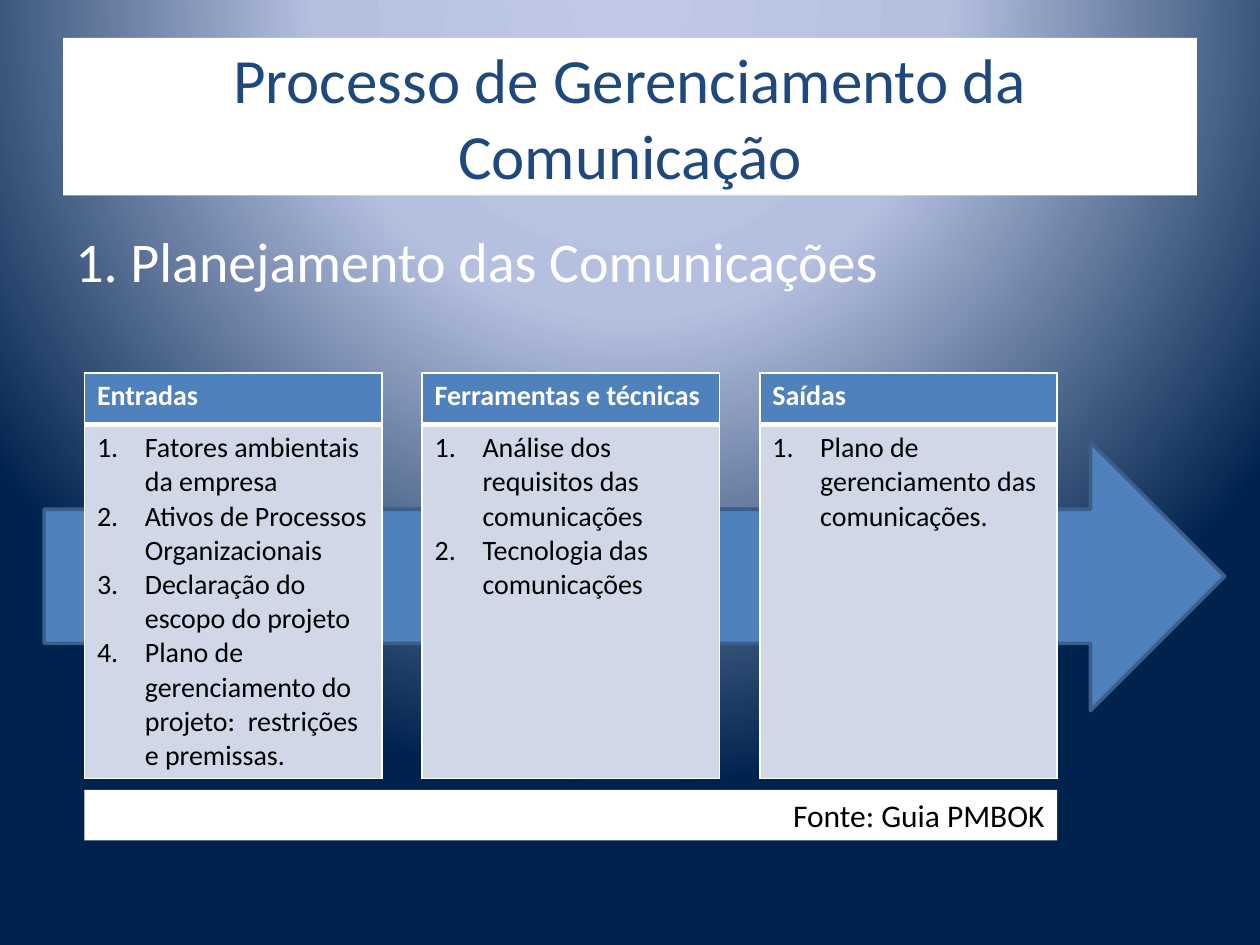
from lxml import etree
from pptx import Presentation, util as u
from pptx.dml.color import RGBColor
from pptx.enum import shapes, text
from pptx.oxml import parse_xml
from pptx.oxml.ns import nsdecls, qn

FONT = "Calibri"
WHITE, BLACK, NAVY = "FFFFFF", "000000", "1F497D"
BLUE, PALE, EDGE = "4F81BD", "D0D8E8", "3A5F8C"
BACKGROUND_STOPS = [(0, "BFC9E5"), (40, "B5C0E0"), (100, "00234D")]

# Column grid for the three tables, in inches
LEFT, TOP, COLUMN_WIDTH, COLUMN_STEP = 0.67, 2.96, 2.36, 2.68
ROW_HEIGHTS = (0.41, 2.81)
INDENT = 0.38

COLUMNS = [
    ("Entradas", ["Fatores ambientais da empresa",
                  "Ativos de Processos Organizacionais",
                  "Declaração do escopo do projeto",
                  "Plano de gerenciamento do projeto:  restrições e premissas."]),
    ("Ferramentas e técnicas", ["Análise dos requisitos das comunicações",
                                "Tecnologia das comunicações"]),
    ("Saídas", ["Plano de gerenciamento das comunicações."]),
]


def color(value):
    return RGBColor.from_string(value)


def box(*lengths):
    return [u.Inches(length) for length in lengths]


def paint(target, value):
    target.fill.solid()
    target.fill.fore_color.rgb = color(value)


def format_text(frame, size, value, bold=False, align=None):
    for paragraph in frame.paragraphs:
        paragraph.alignment = align
        for run in paragraph.runs:
            run.font.name, run.font.size, run.font.bold = FONT, u.Pt(size), bold
            run.font.color.rgb = color(value)


def set_background(slide):
    stops = "".join(f'<a:gs pos="{share * 1000}"><a:srgbClr val="{value}"/></a:gs>'
                    for share, value in BACKGROUND_STOPS)
    background = parse_xml(
        f'<p:bg {nsdecls("p", "a")}><p:bgPr><a:gradFill rotWithShape="1">'
        f'<a:gsLst>{stops}</a:gsLst><a:path path="circle">'
        '<a:fillToRect l="50000" t="-80000" r="50000" b="180000"/></a:path>'
        '</a:gradFill><a:effectLst/></p:bgPr></p:bg>')
    slide.element.cSld.insert(0, background)


def add_title(slide, words):
    title = slide.shapes.title
    title.left, title.top, title.width, title.height = box(0.5, 0.3, 9, 1.25)
    paint(title, WHITE)
    frame = title.text_frame
    frame.text = words
    frame.auto_size = text.MSO_AUTO_SIZE.NONE
    frame.vertical_anchor = text.MSO_ANCHOR.MIDDLE
    format_text(frame, 36, NAVY, align=text.PP_ALIGN.CENTER)


def add_subtitle(slide, words):
    frame = slide.shapes.add_textbox(*box(0.5, 1.75, 9, 0.66)).text_frame
    frame.word_wrap = True
    frame.text = words
    format_text(frame, 32, WHITE)


def add_shape(slide, kind, place, fill, line=None):
    shape = slide.shapes.add_shape(kind, *box(*place))
    shape.shadow.inherit = False
    paint(shape, fill)
    if line:
        shape.line.color.rgb = color(line)
        shape.line.width = u.Pt(2)
    else:
        shape.line.fill.background()
    return shape


def add_borders(cell, widths):
    properties = cell._tc.get_or_add_tcPr()
    for side, width in widths.items():
        line = etree.SubElement(properties, qn(f"a:ln{side}"), w=str(u.Pt(width)))
        fill = etree.SubElement(line, qn("a:solidFill"))
        etree.SubElement(fill, qn("a:srgbClr"), val=WHITE)


def number_paragraph(paragraph):
    properties = paragraph._p.get_or_add_pPr()
    properties.set("marL", str(u.Inches(INDENT)))
    properties.set("indent", str(-u.Inches(INDENT)))
    etree.SubElement(properties, qn("a:buFont"), typeface="+mj-lt")
    etree.SubElement(properties, qn("a:buAutoNum"), type="arabicPeriod")


def add_column(slide, index, heading, items):
    place = box(LEFT + index * COLUMN_STEP, TOP, COLUMN_WIDTH, sum(ROW_HEIGHTS))
    table = slide.shapes.add_table(2, 1, *place).table
    for row, height in zip(table.rows, ROW_HEIGHTS):
        row.height = u.Inches(height)
    header, body = table.cell(0, 0), table.cell(1, 0)

    # Heading with a thick rule below it
    add_borders(header, {"L": 1, "R": 1, "T": 1, "B": 3})
    paint(header, BLUE)
    header.text_frame.text = heading
    format_text(header.text_frame, 16, WHITE, bold=True)

    # Numbered items
    add_borders(body, {"L": 1, "R": 1, "B": 1})
    paint(body, PALE)
    body.text_frame.text = "\n".join(items)
    for paragraph in body.text_frame.paragraphs:
        number_paragraph(paragraph)
    format_text(body.text_frame, 16, BLACK)


def add_source(slide, words):
    width = 2 * COLUMN_STEP + COLUMN_WIDTH
    bar = add_shape(slide, shapes.MSO_SHAPE.RECTANGLE, (LEFT, 6.27, width, 0.4), WHITE)
    bar.text_frame.text = words
    format_text(bar.text_frame, 18, BLACK, align=text.PP_ALIGN.RIGHT)


def main():
    presentation = Presentation()
    presentation.slide_width, presentation.slide_height = box(10, 7.5)
    slide = presentation.slides.add_slide(presentation.slide_layouts[5])
    set_background(slide)
    add_title(slide, "Processo de Gerenciamento da Comunicação")
    add_subtitle(slide, "1. Planejamento das Comunicações")
    add_shape(slide, shapes.MSO_SHAPE.RIGHT_ARROW, (0.35, 3.51, 9.37, 2.13), BLUE, EDGE)
    for index, (heading, items) in enumerate(COLUMNS):
        add_column(slide, index, heading, items)
    add_source(slide, "Fonte: Guia PMBOK")
    presentation.save("out.pptx")


if __name__ == "__main__":
    main()
